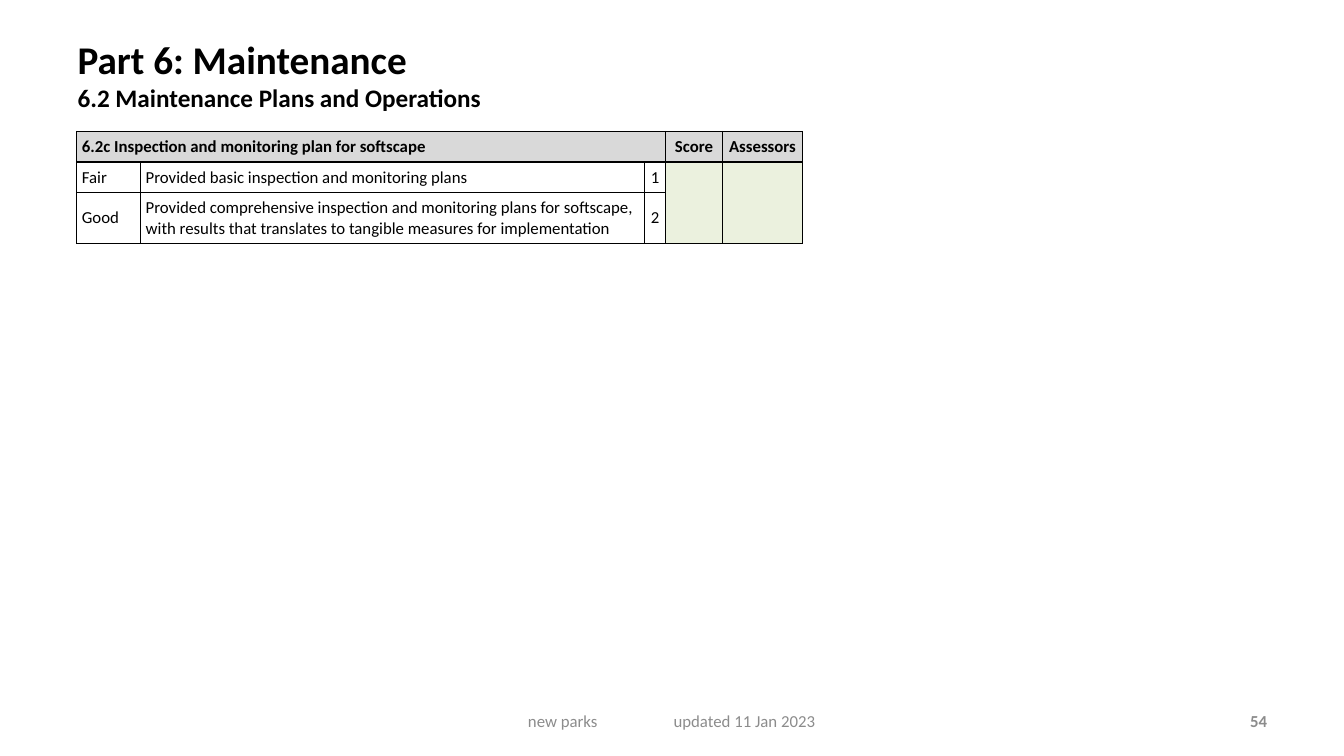
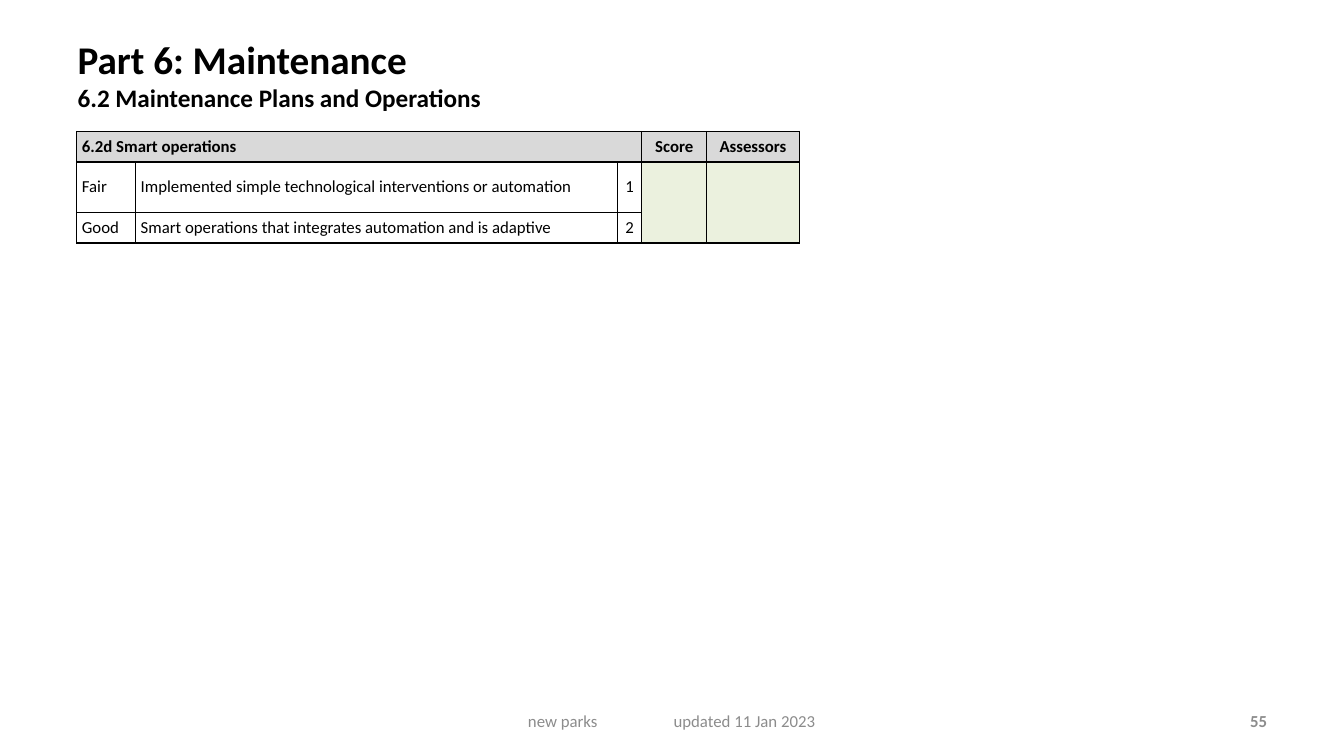
import dataclasses

import lxml.etree
import pptx
import pptx.dml.color
import pptx.enum.text
import pptx.oxml.ns
import pptx.util

Pt = pptx.util.Pt
RGB = pptx.dml.color.RGBColor
ALIGN = pptx.enum.text.PP_ALIGN
ANCHOR = pptx.enum.text.MSO_ANCHOR


@dataclasses.dataclass(frozen=True)
class Theme:
    font: str = "Calibri"
    ink: RGB = RGB(0x00, 0x00, 0x00)
    muted: RGB = RGB(0x8C, 0x8C, 0x8C)
    header: RGB = RGB(0xD9, 0xD9, 0xD9)
    entry: RGB = RGB(0xEB, 0xF1, 0xDE)
    title_size: int = 28
    subtitle_size: int = 18
    body_size: int = 12
    border: int = 1
    cell_inset: float = 3.6


THEME = Theme()
PART = "Part 6: Maintenance"
SECTION = "6.2 Maintenance Plans and Operations"
FOOTER = "new parks\tupdated 11 Jan 2023"
FIRST_PAGE = 54

CRITERIA = [
    {
        "name": "6.2c Inspection and monitoring plan for softscape",
        "levels": [
            ("Fair", "Provided basic inspection and monitoring plans", "1"),
            ("Good", "Provided comprehensive inspection and monitoring plans for softscape, "
                     "with results that translates to tangible measures for implementation", "2"),
        ],
        "columns": [45.6, 360, 15.1, 40.3, 57.6],
        "rows": [21.8, 21.8, 36.4],
    },
    {
        "name": "6.2d Smart operations",
        "levels": [
            ("Fair", "Implemented simple technological interventions or automation", "1"),
            ("Good", "Smart operations that integrates automation and is adaptive", "2"),
        ],
        "columns": [42, 344.2, 17.3, 46.5, 66],
        "rows": [21.8, 36, 21.8],
    },
]


def style(paragraph, size, color=THEME.ink, bold=False, align=ALIGN.LEFT):
    paragraph.alignment = align
    font = paragraph.font
    font.name, font.size, font.bold = THEME.font, Pt(size), bold
    font.color.rgb = color


def add_title(slide):
    title = slide.shapes.title
    title.left, title.top, title.width, title.height = Pt(48.2), Pt(21.6), Pt(746), Pt(71.3)
    frame = title.text_frame
    frame.auto_size = pptx.enum.text.MSO_AUTO_SIZE.NONE
    frame.vertical_anchor = ANCHOR.TOP
    frame.text = f"{PART}\n{SECTION}"
    for paragraph, size in zip(frame.paragraphs, (THEME.title_size, THEME.subtitle_size)):
        style(paragraph, size, bold=True)


def add_footer_box(slide, left, width, text):
    frame = slide.shapes.add_textbox(Pt(left), Pt(500.4), Pt(width), Pt(28.8)).text_frame
    frame.word_wrap = True
    frame.vertical_anchor = ANCHOR.MIDDLE
    paragraph = frame.paragraphs[0]
    paragraph.add_run().text = text
    return frame, paragraph


def add_footer(slide, page):
    _, number = add_footer_box(slide, 688.3, 223.9, str(page))
    style(number, THEME.body_size, THEME.muted, bold=True, align=ALIGN.RIGHT)
    frame, edition = add_footer_box(slide, 328.3, 303.8, FOOTER)
    frame.margin_left = Pt(48.8)
    qn = pptx.oxml.ns.qn
    tabs = lxml.etree.SubElement(edition._p.get_or_add_pPr(), qn("a:tabLst"))
    lxml.etree.SubElement(tabs, qn("a:tab"), pos=str(Pt(104)), algn="l")
    style(edition, THEME.body_size, THEME.muted)


def add_borders(cell):
    qn = pptx.oxml.ns.qn
    properties = cell._tc.get_or_add_tcPr()
    for side in ("L", "R", "T", "B"):
        line = lxml.etree.SubElement(properties, qn(f"a:ln{side}"), w=str(Pt(THEME.border)))
        ink = lxml.etree.SubElement(line, qn("a:solidFill"))
        lxml.etree.SubElement(ink, qn("a:srgbClr"), val=str(THEME.ink))


def format_cell(cell, text, fill, bold, align):
    add_borders(cell)
    if fill is None:
        cell.fill.background()
    else:
        cell.fill.solid()
        cell.fill.fore_color.rgb = fill
    cell.margin_left = cell.margin_right = Pt(THEME.cell_inset)
    cell.margin_top = cell.margin_bottom = Pt(THEME.cell_inset)
    cell.vertical_anchor = ANCHOR.MIDDLE
    cell.text = text
    style(cell.text_frame.paragraphs[0], THEME.body_size, bold=bold, align=align)


def add_score_table(slide, criterion):
    columns, rows = criterion["columns"], criterion["rows"]
    table = slide.shapes.add_table(len(rows), len(columns), Pt(54.9), Pt(93.9),
                                   Pt(sum(columns)), Pt(sum(rows))).table
    table.first_row = table.horz_banding = False
    for column, width in zip(table.columns, columns):
        column.width = Pt(width)
    for row, height in zip(table.rows, rows):
        row.height = Pt(height)

    contents = [(criterion["name"], "", "", "Score", "Assessors")]
    contents += [level + ("", "") for level in criterion["levels"]]
    for r, texts in enumerate(contents):
        for c, text in enumerate(texts):
            is_header = r == 0
            fill = THEME.header if is_header else THEME.entry if c > 2 else None
            align = ALIGN.CENTER if c > 1 else ALIGN.LEFT
            format_cell(table.cell(r, c), text, fill, is_header, align)

    table.cell(0, 0).merge(table.cell(0, 2))
    for c in (3, 4):
        table.cell(1, c).merge(table.cell(len(rows) - 1, c))


def main():
    deck = pptx.Presentation()
    deck.slide_width, deck.slide_height = Pt(960), Pt(540)
    for page, criterion in enumerate(CRITERIA, FIRST_PAGE):
        slide = deck.slides.add_slide(deck.slide_layouts[5])
        add_title(slide)
        add_score_table(slide, criterion)
        add_footer(slide, page)
    deck.save("out.pptx")


if __name__ == "__main__":
    main()
